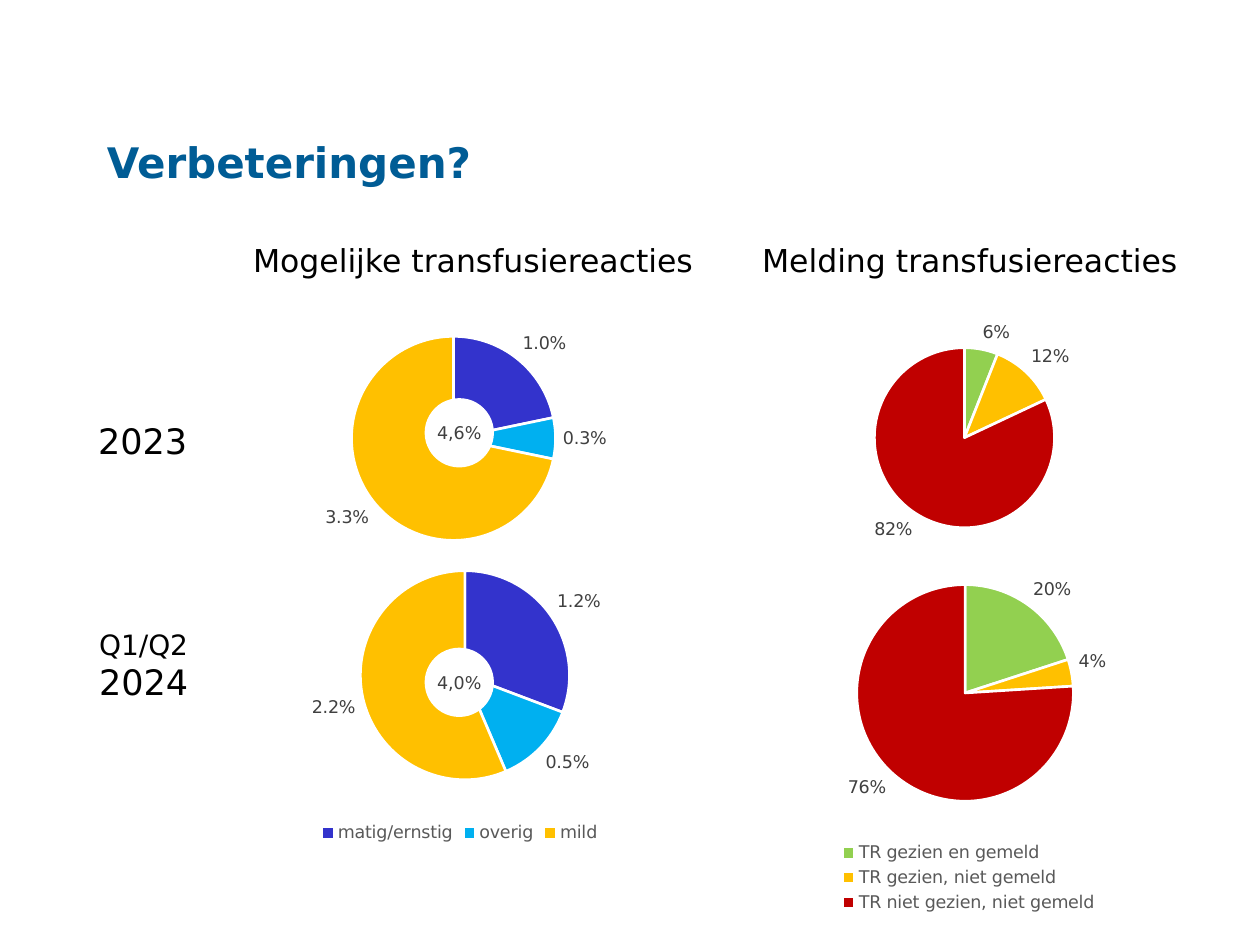
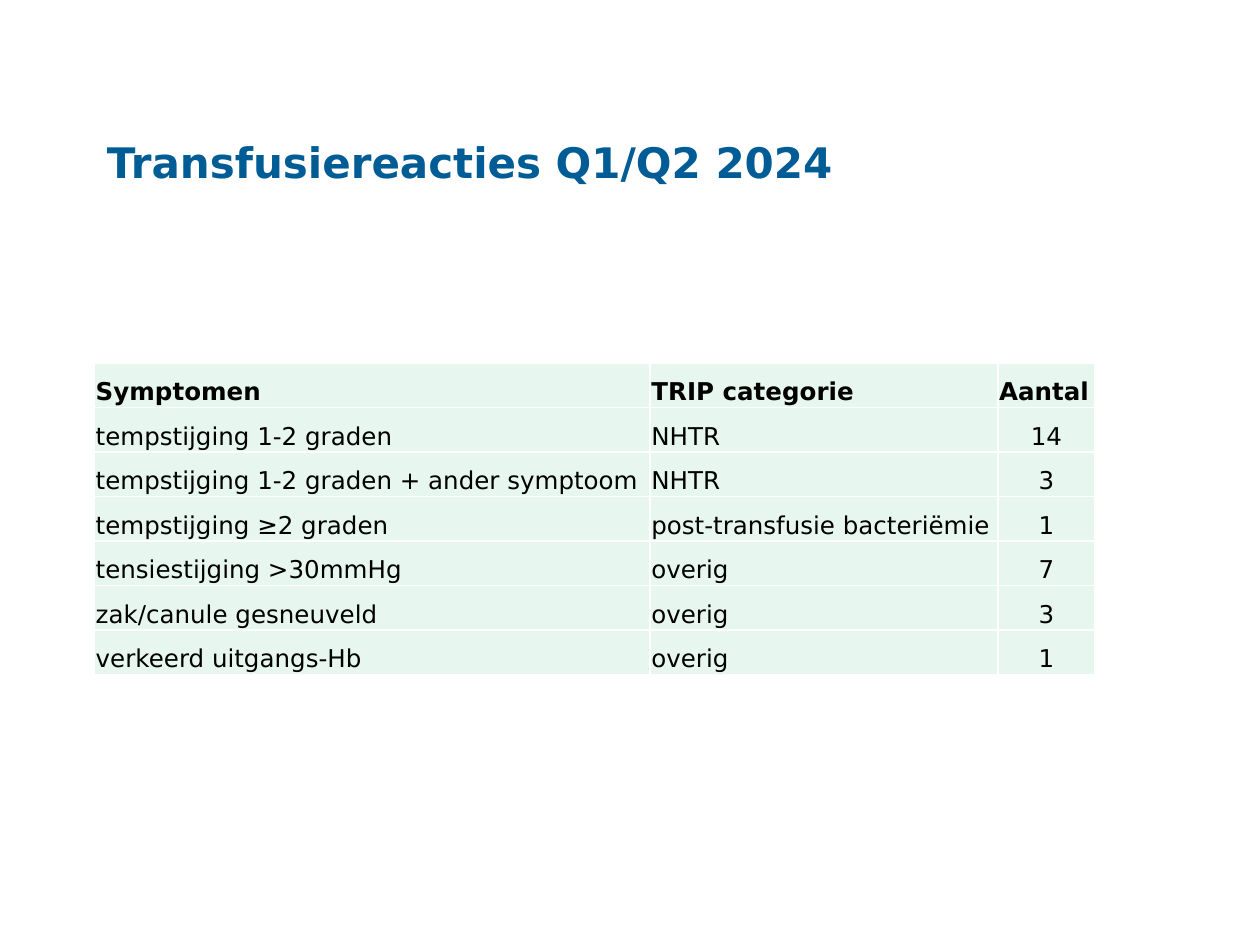
from lxml import etree
from pptx import Presentation
from pptx.chart.data import CategoryChartData
from pptx.dml.color import RGBColor
from pptx.enum import chart as charts, shapes, text
from pptx.oxml import parse_xml
from pptx.oxml.ns import nsdecls, qn
from pptx.util import Inches, Pt

FONT = "DejaVu Sans"
COLORS = {
    "title": "005C95", "text": "000000", "label": "404040", "legend": "595959",
    "white": "FFFFFF", "cell": "E7F6EF",
    "blue": "3333CC", "cyan": "00B0F0", "amber": "FFC000",
    "green": "92D050", "red": "C00000",
}
SEVERITY = {"matig/ernstig": "blue", "overig": "cyan", "mild": "amber"}
REPORTING = {
    "TR gezien en gemeld": "green",
    "TR gezien, niet gemeld": "amber",
    "TR niet gezien, niet gemeld": "red",
}
SYMPTOMS = [
    ("Symptomen", "TRIP categorie", "Aantal"),
    ("tempstijging 1-2 graden", "NHTR", "14"),
    ("tempstijging 1-2 graden + ander symptoom", "NHTR", "3"),
    ("tempstijging ≥2 graden", "post-transfusie bacteriëmie", "1"),
    ("tensiestijging >30mmHg", "overig", "7"),
    ("zak/canule gesneuveld", "overig", "3"),
    ("verkeerd uitgangs-Hb", "overig", "1"),
]


def color(name):
    return RGBColor.from_string(COLORS[name])


def set_font(font, size, color_name="text", bold=False):
    font.name, font.size, font.bold = FONT, Pt(size), bold
    font.color.rgb = color(color_name)


def write(frame, *lines, size=18, color_name="text", bold=False, align=None,
          anchor=None, wrap=True, margin=None, spacing=None):
    """Fill a text frame; a line is a string or a (string, size) pair."""
    frame.word_wrap = wrap
    if anchor is not None:
        frame.vertical_anchor = anchor
    if margin is not None:
        frame.margin_left = frame.margin_top = Inches(margin)
        frame.margin_right = frame.margin_bottom = Inches(margin)
    for index, line in enumerate(lines):
        content, line_size = line if isinstance(line, tuple) else (line, size)
        paragraph = frame.paragraphs[0] if index == 0 else frame.add_paragraph()
        paragraph.alignment = align
        paragraph.line_spacing = spacing
        run = paragraph.add_run()
        run.text = content
        set_font(run.font, line_size, color_name, bold)


def add_text(slide, box, *lines, **style):
    textbox = slide.shapes.add_textbox(*map(Inches, box))
    write(textbox.text_frame, *lines, **style)


def add_titled_slide(presentation, title):
    slide = presentation.slides.add_slide(presentation.slide_layouts[6])
    add_text(slide, (0.75, 0.66, 8.5, 1.25), title, size=24, color_name="title",
             bold=True, anchor=text.MSO_ANCHOR.MIDDLE)
    return slide


def place_plot(chart, box, pie):
    """Fix the pie (left, top, diameter) inside the chart's box."""
    left, top, diameter = pie
    width, height = box[2:]
    fractions = {"x": left / width, "y": top / height,
                 "w": diameter / width, "h": diameter / height}
    layout = parse_xml(f"<c:layout {nsdecls('c')}><c:manualLayout/></c:layout>")
    manual = layout[0]
    settings = {"layoutTarget": "inner", "xMode": "edge", "yMode": "edge", **fractions}
    for tag, value in settings.items():
        shown = value if isinstance(value, str) else f"{value:.4f}"
        etree.SubElement(manual, qn(f"c:{tag}")).set("val", shown)
    plot_area = chart.plots[0]._element.getparent()
    for old_layout in plot_area.findall(qn("c:layout")):
        plot_area.remove(old_layout)
    plot_area.insert(0, layout)


def add_pie(slide, box, pie, slices, values, number_format, legend=False):
    data = CategoryChartData(number_format=number_format)
    data.categories = list(slices) if legend else ["1", "2", "3"]
    data.add_series("Series 1", values)
    frame = slide.shapes.add_chart(
        charts.XL_CHART_TYPE.PIE, *map(Inches, box), data)
    chart = frame.chart
    set_font(chart.font, 10)
    chart.has_title = False
    chart.has_legend = legend
    if legend:
        chart.legend.position = charts.XL_LEGEND_POSITION.BOTTOM
        chart.legend.include_in_layout = False
        set_font(chart.legend.font, 10, "legend")

    plot = chart.plots[0]
    plot.vary_by_categories = True
    for index, slice_color in enumerate(slices.values()):
        point_format = plot.series[0].points[index].format
        point_format.fill.solid()
        point_format.fill.fore_color.rgb = color(slice_color)
        point_format.line.color.rgb = color("white")
        point_format.line.width = Pt(1.5)

    plot.has_data_labels = True
    labels = plot.data_labels
    labels.show_value, labels.show_percentage = True, False
    labels.position = charts.XL_LABEL_POSITION.OUTSIDE_END
    labels.number_format, labels.number_format_is_linked = number_format, False
    set_font(labels.font, 10, "label")
    place_plot(chart, box, pie)


def add_total(slide, top, total):
    """White hole with the total in the middle of a pie."""
    hole = slide.shapes.add_shape(
        shapes.MSO_SHAPE.OVAL, *map(Inches, (3.37, top, 0.55, 0.55)))
    hole.shadow.inherit = False
    hole.fill.solid()
    hole.fill.fore_color.rgb = color("white")
    hole.line.fill.background()
    write(hole.text_frame, total, size=10, color_name="label", margin=0,
          align=text.PP_ALIGN.CENTER, anchor=text.MSO_ANCHOR.MIDDLE)


def add_severity_column(slide, left):
    add_text(slide, (left + 0.06, 1.86, 3.72, 0.45), "Mogelijke transfusiereacties")
    add_pie(slide, (left, 2.41, 3.6, 2.06), (0.94, 0.26, 1.62),
            SEVERITY, (0.01, 0.003, 0.033), "0.0%")
    add_pie(slide, (left, 4.38, 3.6, 2.35), (1.01, 0.15, 1.66),
            SEVERITY, (0.012, 0.005, 0.022), "0.0%", legend=True)
    add_total(slide, 3.16, "4,6%")
    add_total(slide, 5.14, "4,0%")


def add_reporting_column(slide, left):
    add_text(slide, (left - 0.26, 1.86, 3.54, 0.45), "Melding transfusiereacties")
    add_pie(slide, (left, 2.41, 2.97, 2.06), (0.73, 0.35, 1.43),
            REPORTING, (0.06, 0.12, 0.82), "0%")
    add_pie(slide, (left, 4.38, 2.96, 2.9), (0.59, 0.26, 1.72),
            REPORTING, (0.2, 0.04, 0.76), "0%", legend=True)


def add_period_labels(slide):
    add_text(slide, (0.68, 3.28, 0.92, 0.44), "2023", size=20, wrap=False)
    add_text(slide, (0.67, 4.93, 0.94, 0.71), ("Q1/Q2", 16), ("2024", 20),
             align=text.PP_ALIGN.CENTER, wrap=False)


def format_cell(cell):
    cell.margin_left = cell.margin_right = Inches(0.01)
    cell.margin_top, cell.margin_bottom = Pt(0.25), 0
    properties = cell._tc.get_or_add_tcPr()
    for side in "LRTB":
        properties.append(parse_xml(
            f'<a:ln{side} {nsdecls("a")} w="{Pt(1)}"><a:solidFill>'
            f'<a:srgbClr val="{COLORS["white"]}"/></a:solidFill></a:ln{side}>'))
    cell.fill.solid()
    cell.fill.fore_color.rgb = color("cell")


def add_symptom_table(slide, left, top):
    widths, row_height = (4.41, 2.76, 0.77), 0.21
    box = (left, top, sum(widths), row_height * len(SYMPTOMS))
    table = slide.shapes.add_table(
        len(SYMPTOMS), len(widths), *map(Inches, box)).table
    table.first_row = table.horz_banding = False
    for column, width in zip(table.columns, widths):
        column.width = Inches(width)
    for row_index, row in enumerate(SYMPTOMS):
        table.rows[row_index].height = Inches(row_height)
        for column_index, content in enumerate(row):
            cell = table.cell(row_index, column_index)
            format_cell(cell)
            is_count = row_index > 0 and column_index == 2
            write(cell.text_frame, content, size=14, bold=row_index == 0,
                  spacing=1.5, align=text.PP_ALIGN.CENTER if is_count else None)


def main():
    presentation = Presentation()
    presentation.slide_width, presentation.slide_height = Inches(10), Inches(7.5)

    improvements = add_titled_slide(presentation, "Verbeteringen?")
    add_period_labels(improvements)
    add_severity_column(improvements, 1.85)
    add_reporting_column(improvements, 6.21)

    reactions = add_titled_slide(presentation, "Transfusiereacties Q1/Q2 2024")
    add_symptom_table(reactions, 0.75, 2.88)

    presentation.save("out.pptx")


if __name__ == "__main__":
    main()
